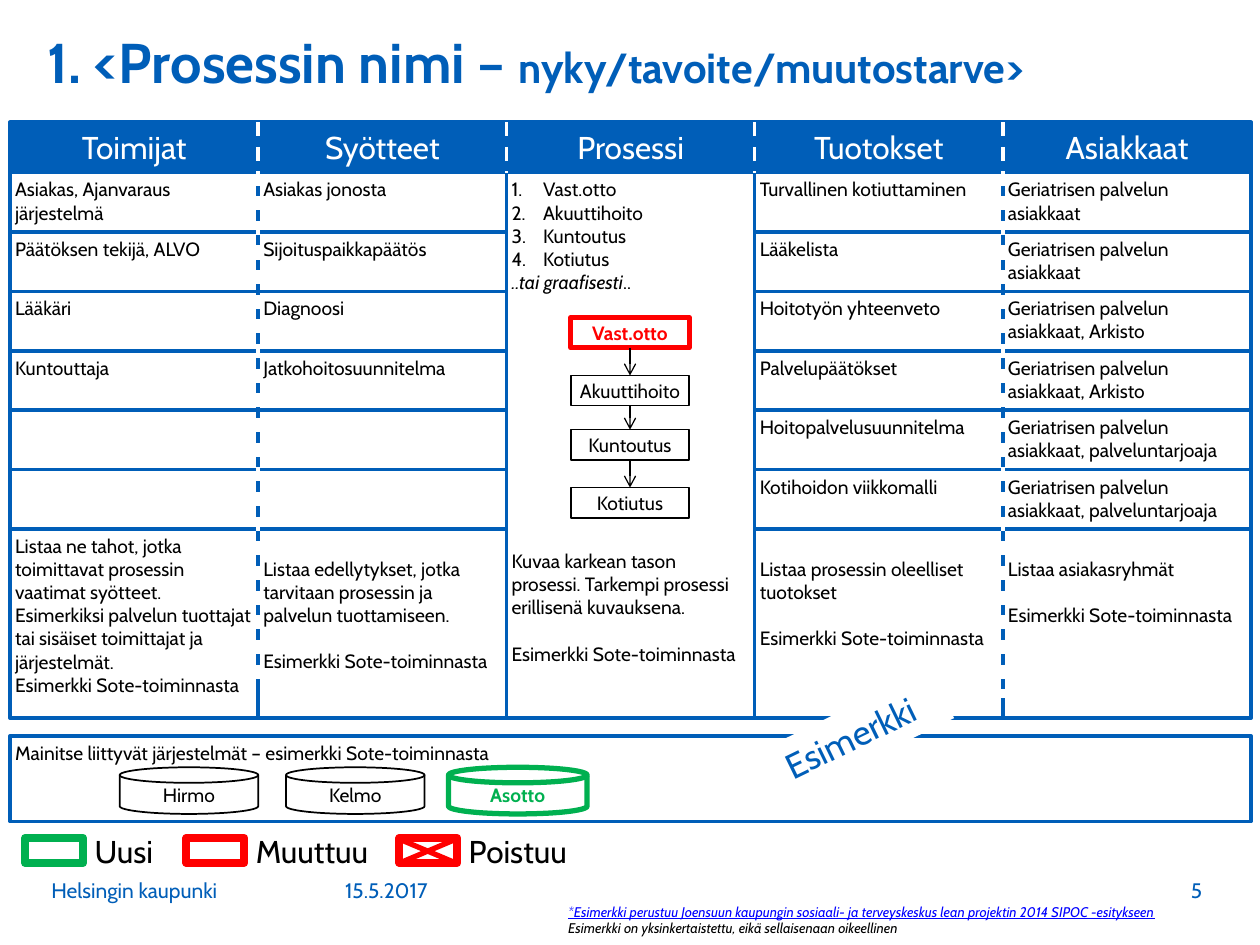
import pptx
import pptx.util
import pptx.dml.color
import pptx.enum.dml
import pptx.enum.shapes
import pptx.enum.text
import pptx.oxml
import pptx.oxml.ns
import lxml.etree

Inches = pptx.util.Inches
Pt = pptx.util.Pt
SHAPES = pptx.enum.shapes.MSO_SHAPE
ANCHOR = pptx.enum.text.MSO_ANCHOR
ALIGN = pptx.enum.text.PP_ALIGN

COLORS = {"blue": "005EB8", "white": "FFFFFF", "black": "000000",
          "green": "00B050", "red": "FF0000", "link": "0000FF"}


def color(name):
    return pptx.dml.color.RGBColor.from_string(COLORS[name])


def add_xml(parent, tag, **attributes):
    return lxml.etree.SubElement(parent, pptx.oxml.ns.qn(tag), attributes)


class SlideBuilder:
    font_name = "Cabin"
    cell_inset = 0.04

    def __init__(self, slide):
        self.slide = slide

    def fill_text(self, shape, paragraphs, size=11, font_color="black", insets=None,
                  anchor=ANCHOR.TOP, align=ALIGN.LEFT, wrap=True, **font_values):
        """Each paragraph is a string or a dict with runs, number and format."""
        frame = shape.text_frame
        frame.word_wrap = wrap
        frame.vertical_anchor = anchor
        if insets is not None:
            sides = ("left", "top", "right", "bottom")
            for side, inset in zip(sides, insets):
                setattr(frame, "margin_" + side, Inches(inset))
        for index, entry in enumerate(paragraphs):
            if isinstance(entry, str):
                entry = {"runs": [(entry, {})]}
            paragraph = frame.paragraphs[0] if index == 0 else frame.add_paragraph()
            for name, value in {"alignment": align, **entry.get("format", {})}.items():
                setattr(paragraph, name, value)
            if entry.get("numbered"):
                properties = paragraph._p.get_or_add_pPr()
                properties.set("marL", str(Inches(0.25)))
                properties.set("indent", str(Inches(-0.25)))
                add_xml(properties, "a:buFont", typeface="+mj-lt")
                add_xml(properties, "a:buAutoNum", type="arabicPeriod")
            for text, run_values in entry["runs"]:
                run = paragraph.add_run()
                run.text = text
                values = {"name": self.font_name, "size": Pt(size),
                          **font_values, **run_values}
                for name, value in values.items():
                    setattr(run.font, name, value)
                run.font.color.rgb = color(font_color)

    def text(self, left, top, width, height, paragraphs, **style):
        box = self.slide.shapes.add_textbox(*map(Inches, (left, top, width, height)))
        self.fill_text(box, paragraphs, **style)

    def box(self, left, top, width, height, paragraphs=(), fill="white",
            line="blue", line_width=2, kind=SHAPES.RECTANGLE, rotation=0, **style):
        shape = self.slide.shapes.add_shape(
            kind, *map(Inches, (left, top, width, height)))
        shape.shadow.inherit = False
        shape.rotation = rotation
        shape.fill.solid()
        shape.fill.fore_color.rgb = color(fill)
        if line:
            shape.line.color.rgb = color(line)
            shape.line.width = Pt(line_width)
        else:
            shape.line.fill.background()
        self.fill_text(shape, paragraphs, **style)

    def cell(self, left, top, width, height, paragraphs=(), blank_top=0):
        inset = self.cell_inset
        self.box(left, top, width, height, paragraphs,
                 insets=(inset, inset + blank_top, inset, inset))

    def node(self, left, top, width, height, label, accent="black", **style):
        self.box(left, top, width, height, [label], line=accent,
                 line_width=1 if accent == "black" else 3, font_color=accent,
                 bold=accent != "black", insets=[self.cell_inset] * 4,
                 anchor=ANCHOR.MIDDLE, align=ALIGN.CENTER, wrap=False, **style)

    def line(self, x1, y1, x2, y2, line, width, dashed=False, arrow=False):
        connector = self.slide.shapes.add_connector(
            pptx.enum.shapes.MSO_CONNECTOR.STRAIGHT, *map(Inches, (x1, y1, x2, y2)))
        connector.line.color.rgb = color(line)
        connector.line.width = Pt(width)
        if dashed:
            connector.line.dash_style = pptx.enum.dml.MSO_LINE.DASH
        if arrow:
            add_xml(connector.line._get_or_add_ln(), "a:tailEnd", type="arrow")
        add_xml(connector._element.spPr, "a:effectLst")


LINE_HEIGHT = 13.3  # points, one line of 11 point text
EXAMPLE = "Esimerkki Sote-toiminnasta"
EXAMPLE_APART = {"runs": [(EXAMPLE, {})],
                 "format": {"space_before": Pt(LINE_HEIGHT)}}
CUSTOMERS = "Geriatrisen palvelun asiakkaat"

# Heading, row texts, closing guidance, blank space above the guidance
COLUMNS = [
    ("Toimijat",
     ["Asiakas, Ajanvaraus järjestelmä", "Päätöksen tekijä, ALVO", "Lääkäri",
      "Kuntouttaja", "", ""],
     ["Listaa ne tahot, jotka toimittavat prosessin vaatimat syötteet.",
      "Esimerkiksi palvelun tuottajat tai sisäiset toimittajat ja järjestelmät.",
      EXAMPLE], 0),
    ("Syötteet",
     ["Asiakas jonosta", "Sijoituspaikkapäätös", "Diagnoosi",
      "Jatkohoitosuunnitelma", "", ""],
     ["Listaa edellytykset, jotka tarvitaan prosessin ja palvelun tuottamiseen.",
      EXAMPLE_APART], 0.18),
    ("Prosessi", None, None, 0),
    ("Tuotokset",
     ["Turvallinen kotiuttaminen", "Lääkelista", "Hoitotyön yhteenveto",
      "Palvelupäätökset", "Hoitopalvelusuunnitelma", "Kotihoidon viikkomalli"],
     ["Listaa prosessin oleelliset tuotokset", EXAMPLE_APART], 0.18),
    ("Asiakkaat",
     [CUSTOMERS] * 2 + [CUSTOMERS + ", Arkisto"] * 2
     + [CUSTOMERS + ", palveluntarjoaja"] * 2,
     ["Listaa asiakasryhmät", EXAMPLE_APART], 0.18),
]
STEPS = ["Vast.otto", "Akuuttihoito", "Kuntoutus", "Kotiutus"]
PROCESS_TEXT = [{"runs": [(step, {})], "numbered": True} for step in STEPS] + [
    {"runs": [("..tai graafisesti", {"italic": True}), ("..", {})]},
    {"runs": [("Kuvaa karkean tason prosessi. Tarkempi prosessi erillisenä "
               "kuvauksena.", {})],
     "format": {"space_before": Pt(11 * LINE_HEIGHT)}},
    EXAMPLE_APART]

LEFT, COLUMN_WIDTH = 0.08, 1.97
HEADER_TOP, ROWS_TOP, GUIDE_TOP, GRID_BOTTOM = 0.97, 1.37, 4.2, 5.7
ROW_HEIGHT = (GUIDE_TOP - ROWS_TOP) / 6


def main():
    presentation = pptx.Presentation()
    presentation.slide_width = Inches(10)
    presentation.slide_height = Inches(7.5)
    builder = SlideBuilder(presentation.slides.add_slide(presentation.slide_layouts[6]))

    # Title
    builder.text(0.28, 0.25, 9.22, 0.75, [
        {"runs": [("1. <Prosessin nimi – ", {}),
                  ("nyky/tavoite/muutostarve>", {"size": Pt(24)})],
         "format": {"line_spacing": 0.85}}], size=32, font_color="blue", bold=True)

    # Footer
    footer = {"size": 12, "font_color": "blue", "anchor": ANCHOR.BOTTOM}
    builder.text(0.31, 6.82, 2.33, 0.39, ["Helsingin kaupunki"], **footer)
    builder.text(2.64, 6.82, 1.55, 0.39, ["15.5.2017"], **footer)
    builder.text(8.46, 6.82, 1.18, 0.39, ["5"], align=ALIGN.RIGHT, **footer)
    note = {"size": 8, "italic": True, "insets": [0] * 4}
    builder.text(4.51, 7.17, 5.49, 0.13, [
        "*Esimerkki perustuu Joensuun kaupungin sosiaali- ja terveyskeskus lean "
        "projektin 2014 SIPOC -esitykseen"],
        font_color="link", underline=True, **note)
    builder.text(4.51, 7.3, 3.1, 0.13, [
        "Esimerkki on yksinkertaistettu, eikä sellaisenaan oikeellinen"], **note)

    # Legend
    for left, label, accent in [(0.2, "Uusi", "green"), (1.48, "Muuttuu", "red"),
                                (3.17, "Poistuu", "red")]:
        builder.box(left, 6.65, 0.46, 0.2, line=accent, line_width=4.5)
        builder.text(left + 0.55, 6.6, 1.01, 0.3, [label], size=18, insets=[0] * 4)
    for start, end in [(3.17, 3.62), (3.62, 3.17)]:
        builder.line(start, 6.85, end, 6.66, "red", 3)

    # Columns of the process grid
    for index, (heading, rows, guidance, blank_top) in enumerate(COLUMNS):
        left = LEFT + index * COLUMN_WIDTH
        if rows is None:
            builder.cell(left, ROWS_TOP, COLUMN_WIDTH, GRID_BOTTOM - ROWS_TOP,
                         PROCESS_TEXT)
        else:
            builder.cell(left, GUIDE_TOP, COLUMN_WIDTH, GRID_BOTTOM - GUIDE_TOP,
                         guidance, blank_top)
            for row, text in enumerate(rows):
                builder.cell(left, ROWS_TOP + row * ROW_HEIGHT, COLUMN_WIDTH,
                             ROW_HEIGHT, [text] if text else [])
        builder.box(left, HEADER_TOP, COLUMN_WIDTH, ROWS_TOP - HEADER_TOP, [heading],
                    fill="blue", size=18, font_color="white", wrap=False,
                    anchor=ANCHOR.MIDDLE, align=ALIGN.CENTER)

    # Related systems
    builder.cell(LEFT, 5.84, 5 * COLUMN_WIDTH, 0.68, [
        "Mainitse liittyvät järjestelmät – esimerkki Sote-toiminnasta"])
    for left, label, accent in [(0.95, "Hirmo", "black"), (2.27, "Kelmo", "black"),
                                (3.56, "Asotto", "green")]:
        builder.node(left, 6.09, 1.1, 0.37, label, accent,
                     kind=SHAPES.FLOWCHART_MAGNETIC_DISK)

    # Process flow
    step_tops, step_height = [2.52, 2.98, 3.41, 3.87], 0.24
    for index, (step, top) in enumerate(zip(STEPS, step_tops)):
        builder.node(4.53, top, 0.94, step_height, step, "black" if index else "red")
    for top, next_top in zip(step_tops, step_tops[1:]):
        builder.line(5, top + step_height, 5, next_top, "black", 0.75, arrow=True)

    # Tilted example label
    builder.box(6.09, 5.6, 1.46, 0.44, ["Esimerkki"], line=None, rotation=334.1,
                size=20, font_color="blue")

    # Dashed column dividers
    for index, bottom in enumerate([5.46, ROWS_TOP, ROWS_TOP, 5.54], start=1):
        x = LEFT + index * COLUMN_WIDTH
        builder.line(x, HEADER_TOP, x, bottom, "white", 2, dashed=True)

    presentation.save("out.pptx")


if __name__ == "__main__":
    main()
